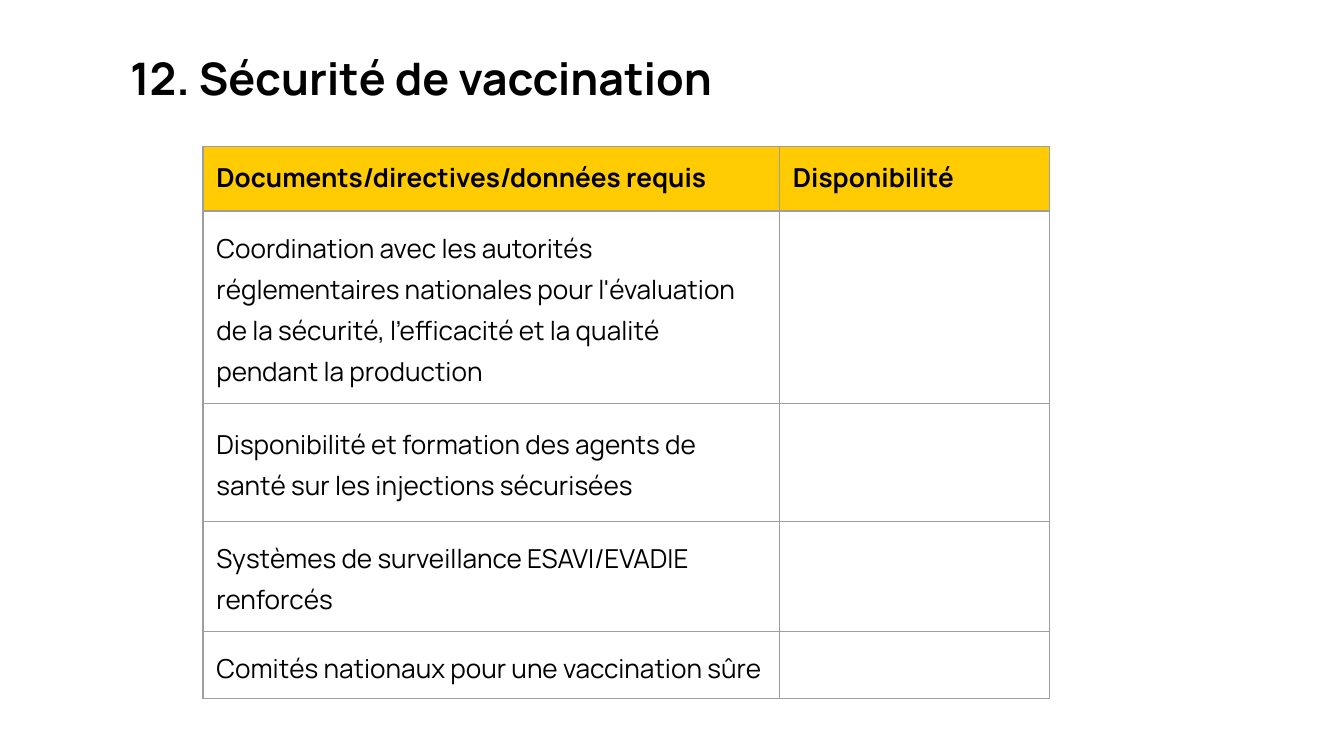
from typing import NamedTuple

from lxml.etree import SubElement
from pptx import Presentation
from pptx.dml.color import RGBColor
from pptx.enum.text import MSO_ANCHOR as Anchor
from pptx.oxml.ns import qn
from pptx.util import Inches, Pt

FONT = "Manrope"
COLORS = {"text": "000000", "header": "FFCB03", "border": "9E9E9E"}
SLIDE_WIDTH = Inches(10)
SLIDE_HEIGHT = SLIDE_WIDTH * 9 // 16
COLUMN_WIDTHS = (4.29, 2.01)
MARGIN = Inches(0.1)


class Row(NamedTuple):
    height: float
    document: str
    availability: str = ""
    header: bool = False


ROWS = (
    Row(0.48, "Documents/directives/données requis", "Disponibilité", True),
    Row(1.43, "Coordination avec les autorités réglementaires nationales pour "
              "l'évaluation de la sécurité, l'efficacité et la qualité pendant la production"),
    Row(0.88, "Disponibilité et formation des agents de santé sur les injections sécurisées"),
    Row(0.82, "Systèmes de surveillance ESAVI/EVADIE renforcés"),
    Row(0.5, "Comités nationaux pour une vaccination sûre"),
)


def set_margins(holder) -> None:
    holder.margin_left = holder.margin_right = MARGIN
    holder.margin_top = holder.margin_bottom = MARGIN


def write(paragraph, text: str, size: float, bold: bool) -> None:
    paragraph.text = text
    font = paragraph.font
    font.name, font.size, font.bold = FONT, Pt(size), bold
    font.color.rgb = RGBColor.from_string(COLORS["text"])


def add_borders(cell) -> None:
    properties = cell._tc.get_or_add_tcPr()
    for side in ("lnL", "lnR", "lnT", "lnB"):
        line = SubElement(properties, qn(f"a:{side}"), w=str(Pt(0.75)))
        fill = SubElement(line, qn("a:solidFill"))
        SubElement(fill, qn("a:srgbClr"), val=COLORS["border"])


def fill_cell(cell, text: str, header: bool) -> None:
    set_margins(cell)
    add_borders(cell)
    if header:
        cell.fill.solid()
        cell.fill.fore_color.rgb = RGBColor.from_string(COLORS["header"])
    else:
        cell.fill.background()
        cell.vertical_anchor = Anchor.MIDDLE
    paragraph = cell.text_frame.paragraphs[0]
    if text and not header:
        paragraph.line_spacing = 1.15
    write(paragraph, text, 14, header)


def add_title(slide, text: str) -> None:
    frame = slide.shapes.add_textbox(
        Inches(0.87), Inches(0.28), Inches(9.13), Inches(0.59)).text_frame
    frame.word_wrap = True
    set_margins(frame)
    write(frame.paragraphs[0], text, 24, True)


def add_checklist(slide) -> None:
    table = slide.shapes.add_table(
        len(ROWS), len(COLUMN_WIDTHS), Inches(1.51), Inches(1.09),
        Inches(sum(COLUMN_WIDTHS)), Inches(sum(row.height for row in ROWS))).table
    table.first_row = table.horz_banding = False
    for column, width in zip(table.columns, COLUMN_WIDTHS):
        column.width = Inches(width)
    for table_row, row in zip(table.rows, ROWS):
        table_row.height = Inches(row.height)
        for cell, text in zip(table_row.cells, (row.document, row.availability)):
            fill_cell(cell, text, row.header)


def main() -> None:
    deck = Presentation()
    deck.slide_width, deck.slide_height = SLIDE_WIDTH, SLIDE_HEIGHT
    slide = deck.slides.add_slide(deck.slide_layouts[6])
    add_title(slide, "12. Sécurité de vaccination")
    add_checklist(slide)
    deck.save("out.pptx")


if __name__ == "__main__":
    main()
